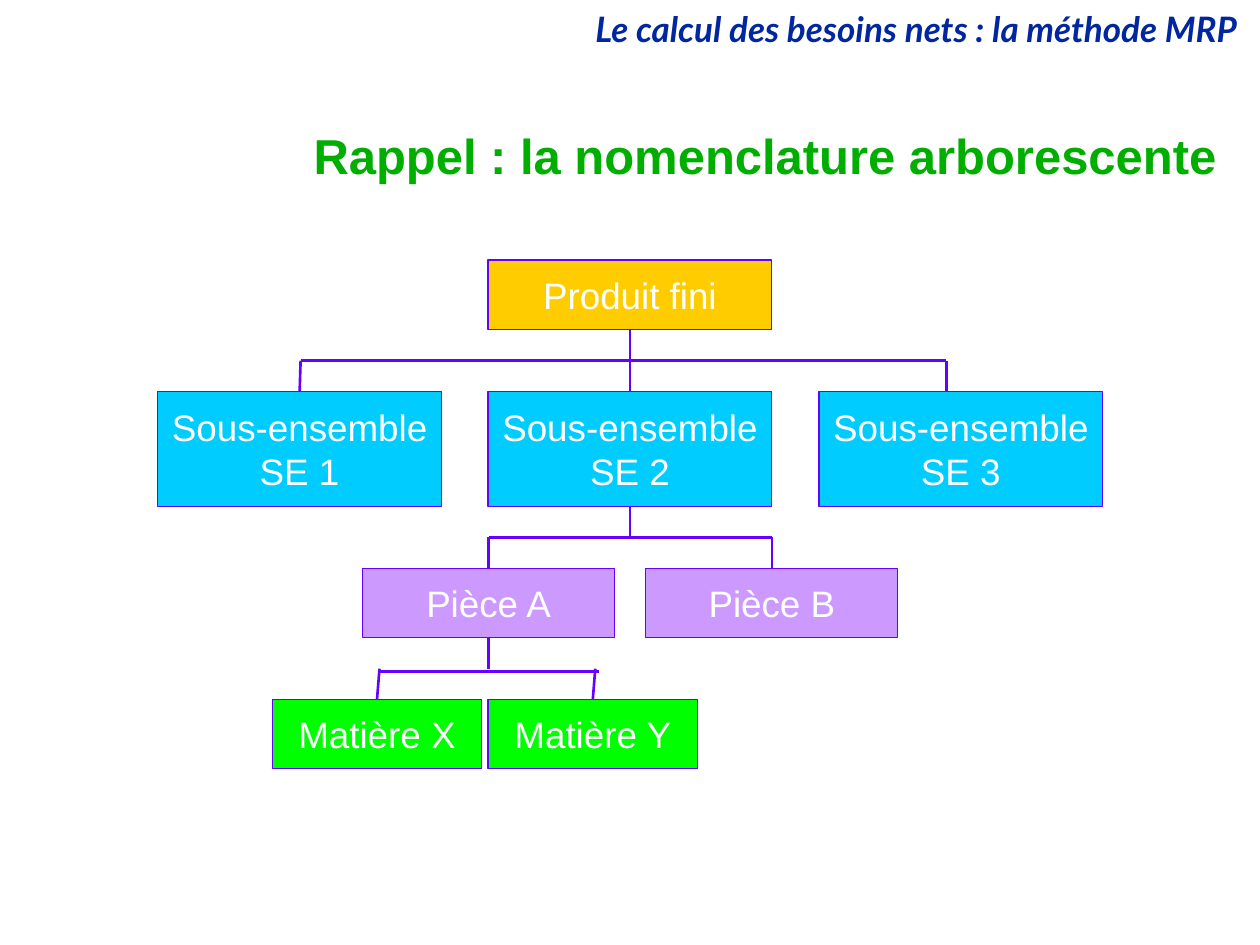
from lxml import etree
from pptx import Presentation
from pptx.dml.color import RGBColor
from pptx.enum.shapes import MSO_CONNECTOR, MSO_SHAPE
from pptx.enum.text import MSO_ANCHOR, PP_ALIGN
from pptx.oxml.ns import qn
from pptx.util import Cm, Pt

STRAIGHT = MSO_CONNECTOR.STRAIGHT
RECT = MSO_SHAPE.RECTANGLE
MIDDLE, TOP = MSO_ANCHOR.MIDDLE, MSO_ANCHOR.TOP
CENTER, RIGHT = PP_ALIGN.CENTER, PP_ALIGN.RIGHT

COLORS = {
    "header": "00279F",
    "title": "00AE00",
    "line": "6600FF",
    "product": "FFCC00",
    "assembly": "00CCFF",
    "part": "CC99FF",
    "material": "00FF00",
    "label": "FFFFFF",
}
BOTTOM_SIDE, TOP_SIDE = 2, 0
LOW, HIGH = 1.4, 2.31
JOIN_TOLERANCE = Cm(0.1)


def rgb(name):
    return RGBColor.from_string(COLORS[name])


def write(tf, text, size=21, color="label", font="Arial", bold=False,
          italic=False, align=CENTER, anchor=MIDDLE, spacing=1.0, wrap=True):
    tf.word_wrap = wrap
    tf.vertical_anchor = anchor
    for i, line in enumerate(text.split("\n")):
        p = tf.paragraphs[0] if i == 0 else tf.add_paragraph()
        p.alignment = align
        p.line_spacing = spacing
        r = p.add_run()
        r.text = line
        r.font.name = font
        r.font.size = Pt(size)
        r.font.bold = bold
        r.font.italic = italic
        r.font.color.rgb = rgb(color)


def add_text(s, text, left, top, width, height, **fmt):
    sp = s.shapes.add_textbox(Cm(left), Cm(top), Cm(width), Cm(height))
    write(sp.text_frame, text, align=RIGHT, spacing=0.9, **fmt)


def add_box(s, text, left, top, width, height, fill):
    sp = s.shapes.add_shape(RECT, Cm(left), Cm(top), Cm(width), Cm(height))
    sp.shadow.inherit = False
    sp.fill.solid()
    sp.fill.fore_color.rgb = rgb(fill)
    sp.line.color.rgb = rgb("line")
    sp.line.width = Pt(0.75)
    write(sp.text_frame, text, wrap=False)
    return sp


def add_row(s, labels, lefts, top, width, height, fill):
    return [add_box(s, label, left, top, width, height, fill)
            for label, left in zip(labels, lefts)]


def add_line(s, x1, y1, x2, y2):
    cxn = s.shapes.add_connector(STRAIGHT, x1, y1, x2, y2)
    cxn.line.color.rgb = rgb("line")
    cxn.line.width = Pt(1.5)
    etree.SubElement(cxn._element.spPr, qn("a:effectLst"))
    return cxn


def add_branch(s, parent, children, drops, joint, bar, spans):
    x = parent.left + parent.width // 2
    stem = add_line(s, x, parent.top + parent.height, x, Cm(joint))
    stem.begin_connect(parent, BOTTOM_SIDE)
    for child, drop in zip(children, drops):
        x = Cm(drop)
        cxn = add_line(s, x, Cm(joint), x, child.top)
        if abs(x - child.left - child.width // 2) < JOIN_TOLERANCE:
            cxn.end_connect(child, TOP_SIDE)
    for start, end in spans:
        add_line(s, Cm(start), Cm(bar), Cm(end), Cm(bar))


def main():
    prs = Presentation()
    prs.slide_width, prs.slide_height = Cm(25.4), Cm(19.05)
    s = prs.slides.add_slide(prs.slide_layouts[6])

    add_text(s, "Le calcul des besoins nets : la méthode MRP", 0, 0.13, 25.2, 1.02,
             size=20, color="header", font="Lato", bold=True, italic=True, anchor=TOP)
    add_text(s, "Rappel : la nomenclature arborescente", 3.18, 2.34, 21.59, 1.7,
             size=28, color="title", bold=True)

    product = add_box(s, "Produit fini", 9.84, 5.24, 5.72, LOW, "product")
    assemblies = add_row(s, [f"Sous-ensemble\nSE {n}" for n in (1, 2, 3)],
                         [3.18, 9.84, 16.51], 7.9, 5.72, HIGH, "assembly")
    parts = add_row(s, ["Pièce A", "Pièce B"], [7.31, 13.02], 11.46, 5.08, LOW, "part")
    materials = add_row(s, ["Matière X", "Matière Y"], [5.49, 9.84], 14.1, 4.22, LOW,
                        "material")

    add_branch(s, product, assemblies, [6.06, 12.7, 19.08], 7.27, 7.27,
               [(6.06, 12.7), (12.7, 19.08)])
    add_branch(s, assemblies[1], parts, [9.85, 15.56], 10.83, 10.83,
               [(9.85, 12.7), (12.7, 15.56)])
    add_branch(s, parts[0], materials, [7.65, 12.0], 13.48, 13.54,
               [(7.62, 9.96), (9.73, 12.07)])

    prs.save("out.pptx")


if __name__ == "__main__":
    main()
